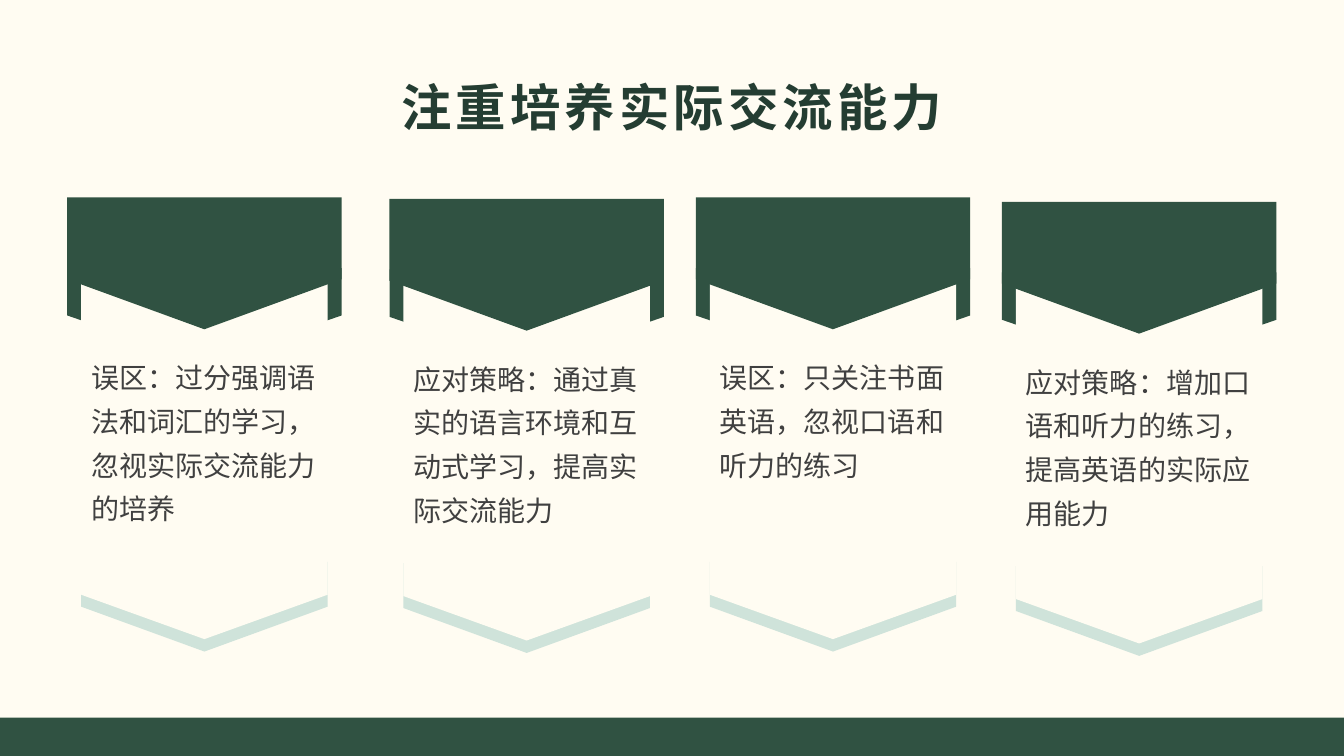
import pptx
import pptx.util
import pptx.dml.color
import pptx.enum.shapes
import pptx.enum.text

Pt = pptx.util.Pt
RGBColor = pptx.dml.color.RGBColor
SHAPE = pptx.enum.shapes.MSO_SHAPE

CREAM = RGBColor(0xFF, 0xFC, 0xF2)
GREEN = RGBColor(0x30, 0x52, 0x42)
DARK_GREEN = RGBColor(0x24, 0x3D, 0x32)
MINT = RGBColor(0xCF, 0xE3, 0xDA)
GREY = RGBColor(0x40, 0x40, 0x40)
FONT = "Noto Sans CJK SC"

SLIDE_W, SLIDE_H = 960, 540
BAR_H = 27.4
BANNER_W = 196
PANEL_W = 176
INSET = (BANNER_W - PANEL_W) / 2
PANEL_TOP = 50.5  # below the top of the banner

# left and top of each banner, then its text
CARDS = [
    (48, 141, "误区：过分强调语法和词汇的学习，忽视实际交流能力的培养"),
    (278.2, 142, "应对策略：通过真实的语言环境和互动式学习，提高实际交流能力"),
    (497, 141, "误区：只关注书面英语，忽视口语和听力的练习"),
    (715.7, 144.1, "应对策略：增加口语和听力的练习，提高英语的实际应用能力"),
]

prs = pptx.Presentation()
prs.slide_width, prs.slide_height = Pt(SLIDE_W), Pt(SLIDE_H)
s = prs.slides.add_slide(prs.slide_layouts[6])
s.background.fill.solid()
s.background.fill.fore_color.rgb = CREAM


def paint(sp, color):
    """Give a shape a flat fill with no line or shadow."""
    sp.shadow.inherit = False
    sp.fill.solid()
    sp.fill.fore_color.rgb = color
    sp.line.fill.background()


def add_text(left, top, width, height, text, size, color):
    """Add a wrapped one-run text box; return its frame, paragraph and run."""
    tf = s.shapes.add_textbox(Pt(left), Pt(top), Pt(width), Pt(height)).text_frame
    tf.word_wrap = True
    p = tf.paragraphs[0]
    r = p.add_run()
    r.text = text
    r.font.size = Pt(size)
    r.font.name = FONT
    r.font.color.rgb = color
    r._r.get_or_add_rPr().set("lang", "zh-CN")
    ea = pptx.oxml.parse_xml(
        '<a:ea xmlns:a="http://schemas.openxmlformats.org/drawingml/2006/main" '
        f'typeface="{FONT}"/>')
    r._r.rPr.append(ea)
    return tf, p, r


bar = s.shapes.add_shape(SHAPE.RECTANGLE, 0, Pt(SLIDE_H - BAR_H), Pt(SLIDE_W), Pt(BAR_H))
paint(bar, GREEN)

tf, p, r = add_text(48, 48, 864, 55.4, "注重培养实际交流能力", 36, DARK_GREEN)
tf.vertical_anchor = pptx.enum.text.MSO_ANCHOR.MIDDLE
p.alignment = pptx.enum.text.PP_ALIGN.CENTER
r.font.bold = True
r._r.rPr.set("spc", "300")

for left, top, text in CARDS:
    center = left + BANNER_W / 2

    # Preset pentagons turned to point down: banner fold and lower chevron
    for y, width, height, color in [
        (top + PANEL_TOP, BANNER_W, 67.7, GREEN),
        (top + 260.3, PANEL_W, 64.1, MINT),
    ]:
        sp = s.shapes.add_shape(
            SHAPE.PENTAGON, Pt(center - height / 2), Pt(y + (height - width) / 2),
            Pt(height), Pt(width))
        sp.rotation = 90
        paint(sp, color)

    # Cream panel, then the banner over its upper edge
    for y, width, shoulder, tip, color in [
        (top + PANEL_TOP, PANEL_W, 233.3, 265, CREAM),
        (top, BANNER_W, 58.5, 94.2, GREEN),
    ]:
        x1, x2 = center - width / 2, center + width / 2
        outline = s.shapes.build_freeform(Pt(x1), Pt(y), scale=1.0)
        outline.add_line_segments([
            (Pt(x2), Pt(y)), (Pt(x2), Pt(y + shoulder)),
            (Pt(center), Pt(y + tip)), (Pt(x1), Pt(y + shoulder)),
        ], close=True)
        paint(outline.convert_to_shape(), color)

    tf, p, r = add_text(left + INSET, top + 106, PANEL_W, 158.4, text, 20, GREY)
    p.line_spacing = 1.3

prs.save("out.pptx")
